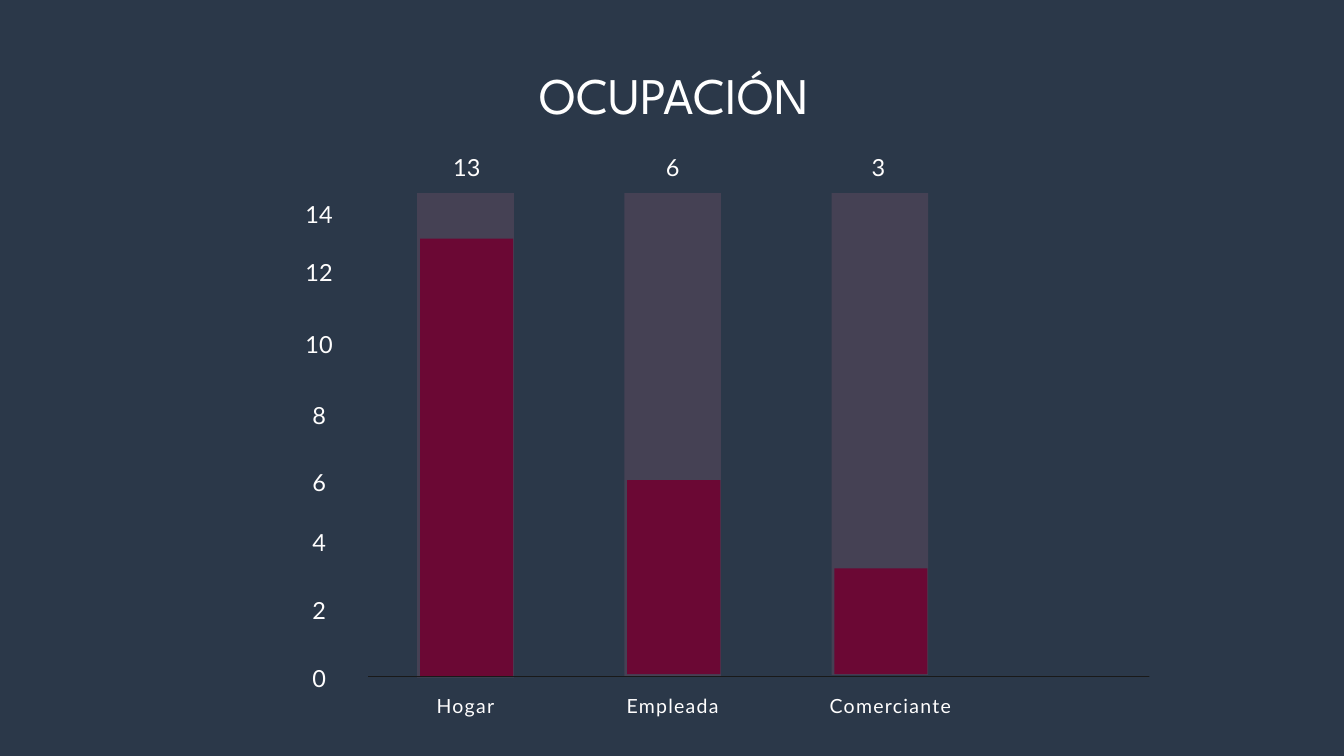
import pptx
import pptx.dml.color
import pptx.enum.shapes
import pptx.enum.text
import pptx.oxml.ns
import pptx.util
from lxml import etree

RGBColor = pptx.dml.color.RGBColor
NAVY = RGBColor(0x2B, 0x38, 0x49)
WHITE = RGBColor(0xFF, 0xFF, 0xFF)
OFF_WHITE = RGBColor(0xFF, 0xFE, 0xFE)
MAUVE = RGBColor(0x9C, 0x61, 0x7B)
WINE = RGBColor(0x6B, 0x08, 0x34)
BLACK = RGBColor(0x19, 0x19, 0x19)

EMU_PER_PX = 9525  # 1920 x 1080 px on 20 x 11.25 inches

# Format values: font settings, line spacing (pt), letter spacing (1/100 pt)
TITLE = ({"name": "League Spartan", "size": pptx.util.Pt(55)}, WHITE, 77, 0)
CATEGORY = ({"name": "Lato", "size": pptx.util.Pt(20.9)}, OFF_WHITE, 34.9, 140)
NUMBER = ({"name": "Lato", "size": pptx.util.Pt(25.2)}, OFF_WHITE, 38.5, 20)

# Axis labels with their uneven tops
TICKS = [("14", 66), ("12", 150), ("10", 252), ("8", 354),
         ("6", 450), ("4", 535), ("2", 632), ("0", 729)]
# Name, count, label width, track height, bar top, bar height
BARS = [("Hogar", "13", 188, 692, 133, 626),
        ("Empleada", "6", 188, 690, 478, 277),
        ("Comerciante", "3", 218, 688, 604, 151)]


def px(n):
    return pptx.util.Emu(n * EMU_PER_PX)


def add_text(s, text, x, y, w, h, style):
    fonts, color, leading, tracking = style
    tf = s.shapes.add_textbox(px(x), px(y), px(w), px(h)).text_frame
    frame = {"margin_left": 0, "margin_right": 0, "margin_top": 0,
             "margin_bottom": 0, "word_wrap": True,
             "auto_size": pptx.enum.text.MSO_AUTO_SIZE.SHAPE_TO_FIT_TEXT}
    for key, value in frame.items():
        setattr(tf, key, value)
    p = tf.paragraphs[0]
    p.alignment = pptx.enum.text.PP_ALIGN.CENTER
    p.line_spacing = pptx.util.Pt(leading)
    r = p.add_run()
    r.text = text
    for key, value in fonts.items():
        setattr(r.font, key, value)
    r.font.color.rgb = color
    if tracking:
        r._r.get_or_add_rPr().set("spc", str(tracking))


def add_rect(s, x, y, w, h, color, opacity=100):
    sp = s.shapes.add_shape(pptx.enum.shapes.MSO_SHAPE.RECTANGLE,
                            px(x), px(y), px(w), px(h))
    sp.shadow.inherit = False
    sp.line.fill.background()
    sp.fill.solid()
    sp.fill.fore_color.rgb = color
    if opacity < 100:
        clr = sp._element.spPr.find(".//" + pptx.oxml.ns.qn("a:srgbClr"))
        alpha = etree.SubElement(clr, pptx.oxml.ns.qn("a:alpha"))
        alpha.set("val", str(opacity * 1000))


def add_title(s, x, y, w, h):
    add_text(s, "OCUPACIÓN", x, y, w, h, TITLE)


def add_bar_graph(s, x, y, w):
    # Value axis
    for label, top in TICKS:
        add_text(s, label, x, y + top, 74, 48, NUMBER)

    # Tracks, bars, counts and category names
    for i, (name, count, label_w, track_h, top, bar_h) in enumerate(BARS):
        left = x + 296 * i
        add_rect(s, left + 177, y + 68, 138, track_h, MAUVE, 23)
        add_rect(s, left + 181, y + top, 133, bar_h, WINE)
        add_text(s, count, x + 211 + 294 * i, y, 74, 48, NUMBER)
        add_text(s, name, left + 152, y + 771, label_w, 43, CATEGORY)

    # Baseline
    add_rect(s, x + 107, y + 758, w - 107, 1, BLACK)


def main():
    prs = pptx.Presentation()
    prs.slide_width, prs.slide_height = px(1920), px(1080)
    s = prs.slides.add_slide(prs.slide_layouts[6])
    s.background.fill.solid()
    s.background.fill.fore_color.rgb = NAVY
    add_title(s, 242, 75, 1442, 97)
    add_bar_graph(s, 419, 208, 1223)
    prs.save("out.pptx")


if __name__ == "__main__":
    main()
